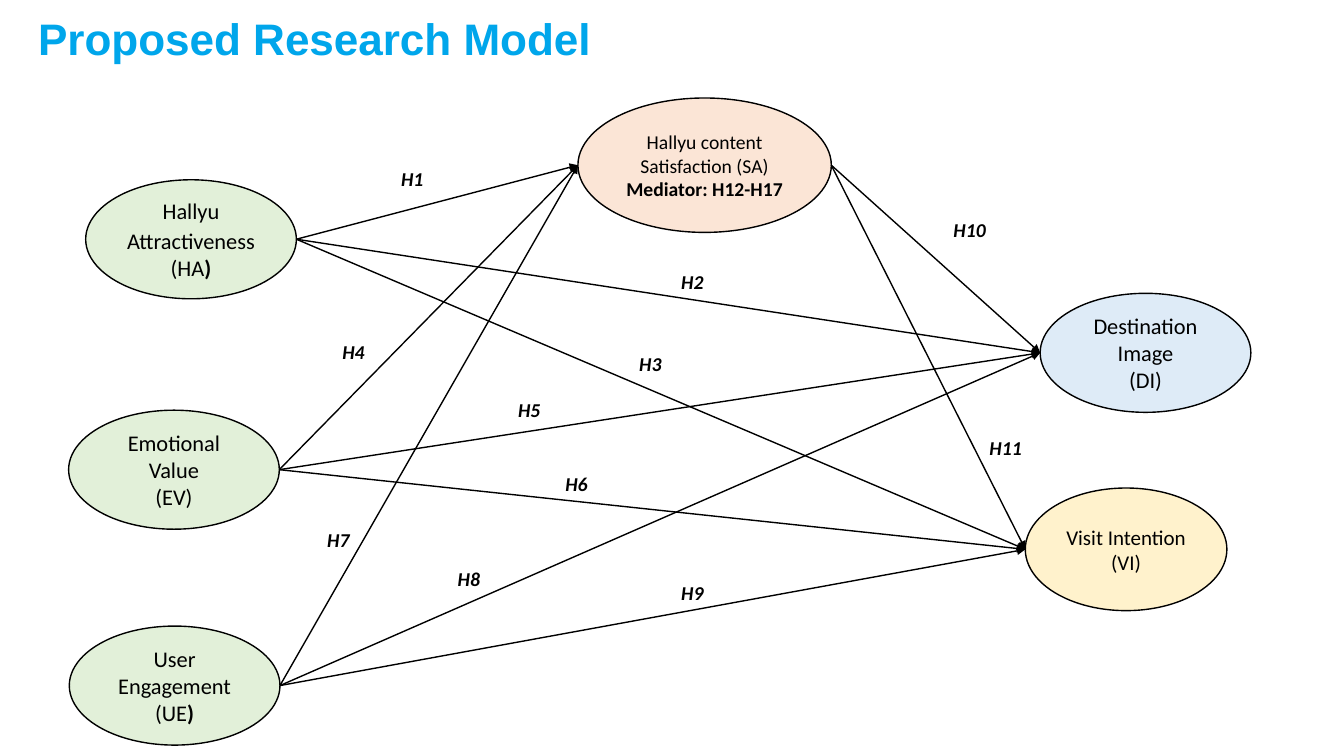
from lxml.etree import SubElement
from pptx import Presentation
from pptx.dml.color import RGBColor
from pptx.enum.shapes import MSO_CONNECTOR as Connector, MSO_SHAPE as Shape
from pptx.enum.text import MSO_ANCHOR as Anchor, MSO_AUTO_SIZE as AutoSize, PP_ALIGN as Align
from pptx.oxml.ns import qn
from pptx.util import Pt

COLORS = {"title": "00A6EB", "ink": "000000", "driver": "E2F0D9",
          "mediator": "FBE5D6", "image": "DEEBF7", "intention": "FFF2CC"}


def color(name):
    return RGBColor.from_string(COLORS[name])


def add_span(para, text, size, ink="ink", **formats):
    span = para.add_run()
    span.text = text
    span.font.color.rgb = color(ink)
    for name, value in {"name": "Calibri", "size": Pt(size), **formats}.items():
        setattr(span.font, name, value)


deck = Presentation()
deck.slide_width, deck.slide_height = Pt(960), Pt(540)
page = deck.slides.add_slide(deck.slide_layouts[5])

# Title
title = page.shapes.title
title.left, title.top, title.width, title.height = Pt(20), Pt(8), Pt(462), Pt(43)
frame = title.text_frame
frame.auto_size, frame.vertical_anchor = AutoSize.NONE, Anchor.MIDDLE
heading = frame.paragraphs[0]
heading.alignment, heading.line_spacing = Align.LEFT, 0.9
add_span(heading, "Proposed Research Model", 31.5, "title", name="Arial", bold=True)

# Constructs: fill, left, top, width, height, paragraphs of (text, size, bold)
constructs = {
    "HA": ("driver", 61.2, 128.4, 150.5, 85,
           [[("Hallyu Attractiveness", 16, False), (" ", 18, False),
             ("(HA", 16, False), (")", 16, True)]]),
    "EV": ("driver", 49, 293, 150.5, 85,
           [[("Emotional Value", 16, False)], [("(EV)", 16, False)]]),
    "UE": ("driver", 49.5, 447.2, 150.5, 85,
           [[("User Engagement (UE", 16, False), (")", 16, True)]]),
    "SA": ("mediator", 412.8, 70, 181, 96,
           [[("Hallyu content Satisfaction (SA)", 14, False)],
            [("Mediator: H12-H17", 14, True)]]),
    "DI": ("image", 743, 209.5, 150.5, 85,
           [[("Destination Image", 16, False)], [("(DI)", 16, False)]]),
    "VI": ("intention", 732.4, 348.6, 144, 87.6,
           [[("Visit Intention", 15, False)], [("(VI)", 15, False)]]),
}
ovals = {}
for key, (fill, left, top, width, height, paragraphs) in constructs.items():
    oval = page.shapes.add_shape(Shape.OVAL, Pt(left), Pt(top), Pt(width), Pt(height))
    oval.shadow.inherit = False
    oval.fill.solid()
    oval.fill.fore_color.rgb = color(fill)
    oval.line.color.rgb = color("ink")
    oval.line.width = Pt(1)
    frame = oval.text_frame
    frame.word_wrap, frame.vertical_anchor = True, Anchor.MIDDLE
    for index, spans in enumerate(paragraphs):
        para = frame.add_paragraph() if index else frame.paragraphs[0]
        para.alignment = Align.CENTER
        for text, size, bold in spans:
            add_span(para, text, size, bold=bold)
    ovals[key] = oval

# Hypotheses: source, target, label left, top, width
hypotheses = [
    ("HA", "SA", 279.4, 116, 39), ("HA", "DI", 479.5, 189.5, 42),
    ("HA", "VI", 449.5, 248, 88), ("EV", "SA", 237.4, 239, 40),
    ("EV", "DI", 363, 281, 35), ("EV", "VI", 396.7, 333.5, 32.5),
    ("UE", "SA", 226.6, 373.7, 31.5), ("UE", "DI", 319.8, 401.2, 85),
    ("UE", "VI", 479.5, 411.2, 85), ("SA", "DI", 674, 152, 117),
    ("SA", "VI", 699.7, 308, 48),
]
for number, (source, target, left, top, width) in enumerate(hypotheses, 1):
    # Arrow from the right tip of one oval to the left tip of the next
    start, end = ovals[source], ovals[target]
    arrow = page.shapes.add_connector(
        Connector.STRAIGHT, start.left + start.width, start.top + start.height // 2,
        end.left, end.top + end.height // 2)
    arrow.line.color.rgb = color("ink")
    arrow.line.width = Pt(1)
    SubElement(arrow.line._get_or_add_ln(), qn("a:tailEnd"), type="triangle")
    SubElement(arrow._element.spPr, qn("a:effectLst"))

    # Label
    label = page.shapes.add_textbox(Pt(left), Pt(top), Pt(width), Pt(24.2))
    label.text_frame.word_wrap = True
    label.text_frame.auto_size = AutoSize.SHAPE_TO_FIT_TEXT
    add_span(label.text_frame.paragraphs[0], f"H{number}", 14, bold=True, italic=True)

deck.save("out.pptx")
